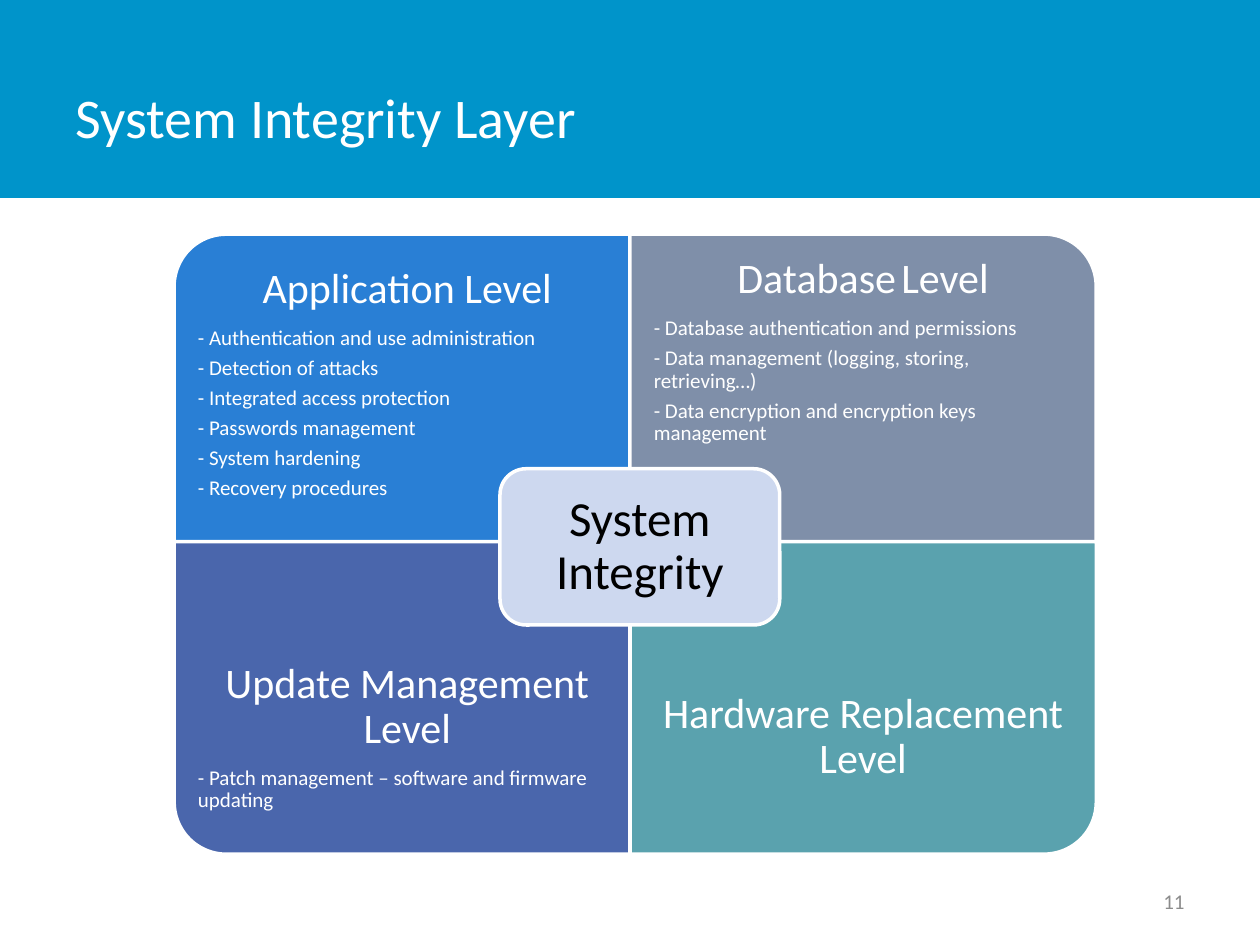
"""Build the System Integrity Layer slide."""
from pptx import Presentation, util as u
from pptx.dml.color import RGBColor
from pptx.enum import shapes, text

WHITE = RGBColor(0xFF, 0xFF, 0xFF)
BLACK = RGBColor(0, 0, 0)
GREY = RGBColor(0x8C, 0x8C, 0x8C)
BAND = RGBColor(0x00, 0x94, 0xCA)
BLUE = RGBColor(0x29, 0x7F, 0xD5)
SLATE = RGBColor(0x7F, 0x8F, 0xA9)
NAVY = RGBColor(0x4A, 0x66, 0xAC)
TEAL = RGBColor(0x5A, 0xA2, 0xAE)
PALE = RGBColor(0xCD, 0xD8, 0xEF)
LEFT, MID, RIGHT = text.PP_ALIGN.LEFT, text.PP_ALIGN.CENTER, text.PP_ALIGN.RIGHT
KIND = shapes.MSO_SHAPE
HEAD, BODY = 24, 12
WIDE, HIGH, TALL = 9.4, 6.3, 4.72
COLS, ROWS = (3.51, 12.7), (4.72, 10.92)

PANELS = [
    (0, 0, 270, BLUE, 5.38, [("Application Level", HEAD)],
     ["- Authentication and use administration", "- Detection of attacks",
      "- Integrated access protection", "- Passwords management",
      "- System hardening", "- Recovery procedures"]),
    (1, 0, 0, SLATE, 4.72, [("Database", HEAD), (" ", 13), ("Level", HEAD)],
     ["- Database authentication and permissions",
      "- Data management (logging, storing, retrieving…)",
      "- Data encryption and encryption keys management"]),
    (0, 1, 180, NAVY, 12.5, [("Update Management Level", HEAD)],
     ["- Patch management – software and firmware updating"]),
    (1, 1, 90, TEAL, 12.5, [("Hardware Replacement Level", HEAD)], []),
]


class Deck:
    """Hold the style and the current slide."""

    def __init__(self):
        """Start a deck with one title-only slide."""
        self.font = "Calibri"
        self.prs = Presentation()
        self.prs.slide_width, self.prs.slide_height = u.Cm(25.4), u.Cm(19.05)
        self.slide = self.prs.slides.add_slide(self.prs.slide_layouts[5])

    def set(self, item, **vals):
        """Set attributes from format values."""
        for key, val in vals.items():
            setattr(item, key, val)

    def place(self, item, box):
        """Give an item its position and size."""
        names = ("left", "top", "width", "height")
        self.set(item, **dict(zip(names, map(u.Cm, box))))

    def frame(self, item, side, edge):
        """Format a text frame and return it."""
        body = item.text_frame
        self.set(body, word_wrap=True, vertical_anchor=text.MSO_ANCHOR.MIDDLE,
                 margin_left=u.Cm(side), margin_right=u.Cm(side),
                 margin_top=u.Cm(edge), margin_bottom=u.Cm(edge))
        return body

    def para(self, par, runs, color, **vals):
        """Fill a paragraph with sized runs."""
        self.set(par, **vals)
        for words, size in runs:
            run = par.add_run()
            run.text = words
            self.set(run.font, name=self.font, size=u.Pt(size))
            run.font.color.rgb = color

    def title(self, words, box):
        """Move and fill the title."""
        item = self.slide.shapes.title
        self.place(item, box)
        body = self.frame(item, 0.25, 0.13)
        self.para(body.paragraphs[0], [(words, 32)], WHITE, alignment=LEFT)

    def shape(self, kind, box, fill, edge=True, turn=0):
        """Add a flat preset shape."""
        item = self.slide.shapes.add_shape(kind, *map(u.Cm, box))
        item.shadow.inherit = False
        item.rotation = turn
        item.fill.solid()
        item.fill.fore_color.rgb = fill
        if edge:
            item.line.color.rgb = WHITE
            item.line.width = u.Pt(2)
        else:
            item.line.fill.background()
        return item

    def band(self, box):
        """Add the header band behind the title."""
        item = self.shape(KIND.RECTANGLE, box, BAND, edge=False)
        self.slide.shapes.title._element.addprevious(item._element)

    def panel(self, col, row, turn, fill, top, head, lines):
        """Add one quarter with its heading and list."""
        x, y = COLS[col], ROWS[row]
        box = (x, y, WIDE, HIGH)
        if turn % 180:
            gap = (WIDE - HIGH) / 2
            box = (x + gap, y - gap, HIGH, WIDE)
        self.shape(KIND.ROUND_1_RECTANGLE, box, fill, turn=turn)
        item = self.slide.shapes.add_textbox(*map(u.Cm, (x, top, WIDE, TALL)))
        body = self.frame(item, 0.48, 0.48)
        self.para(body.paragraphs[0], head, WHITE, alignment=MID,
                  line_spacing=0.9, space_after=u.Pt(8.4))
        for line in lines:
            self.para(body.add_paragraph(), [(line, BODY)], WHITE, alignment=LEFT,
                      line_spacing=0.9, space_after=u.Pt(4.2))

    def hub(self, words, box):
        """Add the centre box."""
        item = self.shape(KIND.ROUNDED_RECTANGLE, box, PALE)
        body = self.frame(item, 0.3, 0.3)
        self.para(body.paragraphs[0], [(words, 28)], BLACK, alignment=MID,
                  line_spacing=0.9)

    def number(self, words, box):
        """Add the page number."""
        item = self.slide.shapes.add_textbox(*map(u.Cm, box))
        body = self.frame(item, 0.25, 0.13)
        self.para(body.paragraphs[0], [(words, 12)], GREY, alignment=RIGHT)


def main():
    """Build and save the deck."""
    deck = Deck()
    deck.band((0, 0, 25.4, 3.99))
    deck.title("System Integrity Layer", (1.27, 0.76, 19.84, 3.18))
    deck.number("11", (18.21, 17.65, 5.92, 1.02))
    for panel in PANELS:
        deck.panel(*panel)
    deck.hub("System Integrity", (10.08, 9.45, 5.64, 3.15))
    deck.prs.save("out.pptx")


if __name__ == "__main__":
    main()
